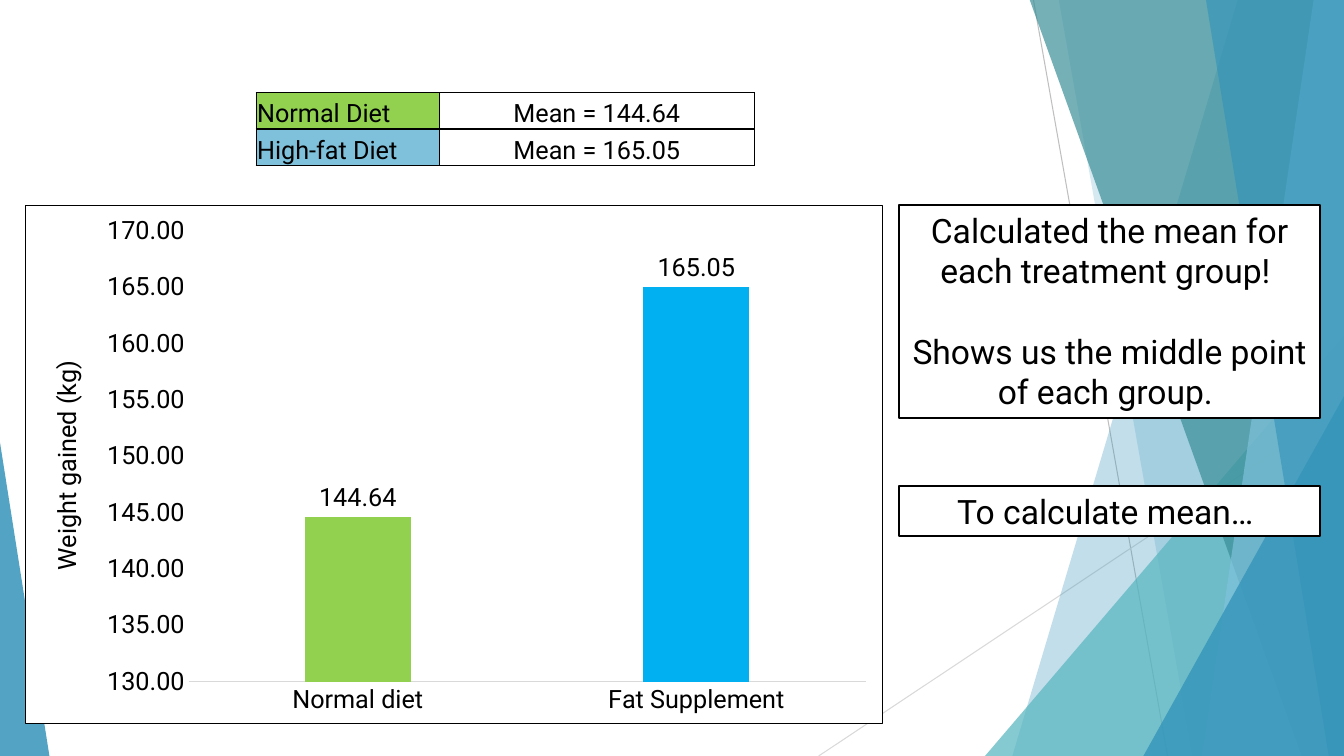
from lxml import etree
from pptx import Presentation
from pptx import util as u
from pptx.chart.data import CategoryChartData
from pptx.dml.color import RGBColor
from pptx.enum import chart as ch, shapes, text
from pptx.oxml import parse_xml
from pptx.oxml.ns import nsdecls, qn

FONT = "Roboto"
COLORS = {
    "black": "000000", "white": "FFFFFF", "green": "92D050", "sky": "7FC1DB",
    "bar_blue": "00B0F0", "axis": "D9D9D9", "grey": "BFBFBF",
    "blue": "3494BA", "teal": "58B6C0", "dark_teal": "3A8F98",
}


def rgb(name):
    return RGBColor.from_string(COLORS[name])


def set_font(font, size):
    font.name = FONT
    font.size = u.Pt(size)
    font.bold = False
    font.color.rgb = rgb("black")


def add_run(p, words, size):
    r = p.add_run()
    r.text = words
    set_font(r.font, size)


def fill_facet(sp, color, opacity):
    sp.shadow.inherit = False
    sp.line.fill.background()
    sp.fill.solid()
    sp.fill.fore_color.rgb = rgb(color)
    clr = sp.fill._xPr.find(qn("a:solidFill"))[0]
    etree.SubElement(clr, qn("a:alpha"), val=str(opacity * 1000))


def add_line(s, x1, y1, x2, y2, color):
    c = s.shapes.add_connector(shapes.MSO_CONNECTOR.STRAIGHT,
                               *map(u.Inches, (x1, y1, x2, y2)))
    c.line.color.rgb = rgb(color)
    c.line.width = u.Pt(0.75)
    etree.SubElement(c._element.spPr, qn("a:effectLst"))


def add_facet(s, top_x, bottom_x, right, bottom, color, opacity):
    fb = s.shapes.build_freeform(u.Inches(top_x), u.Inches(-0.01))
    corners = [(right, -0.01), (right, bottom), (bottom_x, bottom)]
    fb.add_line_segments([(u.Inches(x), u.Inches(y)) for x, y in corners])
    fill_facet(fb.convert_to_shape(), color, opacity)


def add_triangle(s, x, y, right, bottom, apex, color, opacity):
    sp = s.shapes.add_shape(shapes.MSO_SHAPE.ISOSCELES_TRIANGLE,
                            *map(u.Inches, (x, y, right - x, bottom - y)))
    sp.adjustments[0] = apex
    fill_facet(sp, color, opacity)


def add_backdrop(s, w, h):
    add_line(s, 10.25, 0, 11.58, h, "grey")
    add_line(s, w, 4.03, 8.12, h, "axis")
    add_facet(s, 12.28, 10.04, w, h, "blue", 30)
    add_facet(s, 10.5, 11.83, w, h, "blue", 20)
    add_triangle(s, 9.77, 3.33, w, h, 1, "teal", 72)
    add_facet(s, 10.21, 12.91, w, h, "dark_teal", 70)
    add_facet(s, 13.03, 11.92, w, h, "sky", 70)
    add_facet(s, 11.96, 13.18, w, h, "blue", 65)
    add_triangle(s, 11.34, 3.93, w, h, 1, "blue", 80)
    add_triangle(s, 0, 4.39, 0.49, h, 0, "blue", 85)


def format_cell(cell, words, color, align):
    cell.margin_left = cell.margin_right = cell.margin_top = u.Inches(0.01)
    cell.margin_bottom = 0
    cell.vertical_anchor = text.MSO_ANCHOR.BOTTOM
    p = cell.text_frame.paragraphs[0]
    p.alignment = align
    add_run(p, words, 18)
    for side in "LRTB":
        cell._tc.get_or_add_tcPr().append(parse_xml(
            f'<a:ln{side} {nsdecls("a")} w="12700"><a:solidFill>'
            f'<a:srgbClr val="{COLORS["black"]}"/></a:solidFill></a:ln{side}>'))
    cell.fill.solid()
    cell.fill.fore_color.rgb = rgb(color)


def add_mean_table(s, x, y, w, h):
    rows = [("Normal Diet", "Mean = 144.64", "green"),
            ("High-fat Diet", "Mean = 165.05", "sky")]
    table = s.shapes.add_table(len(rows), 2, *map(u.Inches, (x, y, w, h))).table
    table.columns[0].width = u.Inches(1.82)
    table.columns[1].width = u.Inches(w - 1.82)
    for i, (diet, mean, color) in enumerate(rows):
        format_cell(table.cell(i, 0), diet, color, text.PP_ALIGN.LEFT)
        format_cell(table.cell(i, 1), mean, "white", text.PP_ALIGN.CENTER)


def add_note(s, x, y, w, h, paragraphs):
    sp = s.shapes.add_shape(shapes.MSO_SHAPE.RECTANGLE,
                            *map(u.Inches, (x, y, w, h)))
    sp.shadow.inherit = False
    sp.fill.solid()
    sp.fill.fore_color.rgb = rgb("white")
    sp.line.color.rgb = rgb("black")
    sp.line.width = u.Pt(1.5)
    tf = sp.text_frame
    tf.word_wrap = True
    tf.vertical_anchor = text.MSO_ANCHOR.TOP
    for i, words in enumerate(paragraphs):
        p = tf.add_paragraph() if i else tf.paragraphs[0]
        p.alignment = text.PP_ALIGN.CENTER
        p.space_before = u.Pt(29 if i else 0)
        add_run(p, words, 24)


def frame_chart(chart):
    space = chart._chartSpace
    space.find(qn("c:chart")).addnext(parse_xml(
        f'<c:spPr {nsdecls("c", "a")}><a:solidFill>'
        f'<a:srgbClr val="{COLORS["white"]}"/></a:solidFill>'
        f'<a:ln w="9525"><a:solidFill><a:srgbClr val="{COLORS["black"]}"/>'
        '</a:solidFill></a:ln></c:spPr>'))
    area = space.find(qn("c:chart")).find(qn("c:plotArea"))
    for old in area.findall(qn("c:layout")):
        area.remove(old)
    area.insert(0, parse_xml(
        f'<c:layout {nsdecls("c")}><c:manualLayout>'
        '<c:layoutTarget val="inner"/><c:xMode val="edge"/><c:yMode val="edge"/>'
        '<c:x val="0.19"/><c:y val="0.05"/><c:w val="0.79"/><c:h val="0.87"/>'
        '</c:manualLayout></c:layout>'))


def add_weight_chart(s, x, y, w, h):
    data = CategoryChartData(number_format="0.00")
    data.categories = ["Normal diet", "Fat Supplement"]
    data.add_series("Series 1", [144.64, 165.05])
    chart = s.shapes.add_chart(ch.XL_CHART_TYPE.COLUMN_CLUSTERED,
                               *map(u.Inches, (x, y, w, h)), data).chart
    chart.has_legend = False
    chart.has_title = False
    set_font(chart.font, 18)
    frame_chart(chart)

    cat, val = chart.category_axis, chart.value_axis
    for axis in (cat, val):
        axis.major_tick_mark = axis.minor_tick_mark = ch.XL_TICK_MARK.NONE
        axis.has_major_gridlines = False
        set_font(axis.tick_labels.font, 18)
    cat.format.line.color.rgb = rgb("axis")
    cat.format.line.width = u.Pt(0.75)
    val.format.line.fill.background()
    val.minimum_scale, val.maximum_scale, val.major_unit = 130, 170, 5
    val.tick_labels.number_format = "0.00"
    val.tick_labels.number_format_is_linked = False
    add_run(val.axis_title.text_frame.paragraphs[0], "Weight gained (kg)", 18)

    plot = chart.plots[0]
    plot.gap_width, plot.overlap = 219, -27
    plot.vary_by_categories = False
    series = plot.series[0]
    for i, color in enumerate(("green", "bar_blue")):
        fill = series.points[i].format.fill
        fill.solid()
        fill.fore_color.rgb = rgb(color)
    labels = series.data_labels
    labels.show_value = True
    labels.position = ch.XL_LABEL_POSITION.OUTSIDE_END
    labels.number_format = "0.00"
    labels.number_format_is_linked = False
    set_font(labels.font, 18)


def main():
    prs = Presentation()
    prs.slide_width, prs.slide_height = u.Inches(13.33), u.Inches(7.5)
    s = prs.slides.add_slide(prs.slide_layouts[6])
    add_backdrop(s, 13.33, 7.5)
    add_mean_table(s, 2.54, 0.92, 4.94, 0.72)
    add_note(s, 8.92, 2.03, 4.17, 2.12,
             ["Calculated the mean for each treatment group! ",
              "Shows us the middle point of each group. "])
    add_weight_chart(s, 0.25, 2.03, 8.51, 5.15)
    add_note(s, 8.92, 4.82, 4.17, 0.5, ["To calculate mean… "])
    prs.save("out.pptx")


if __name__ == "__main__":
    main()
